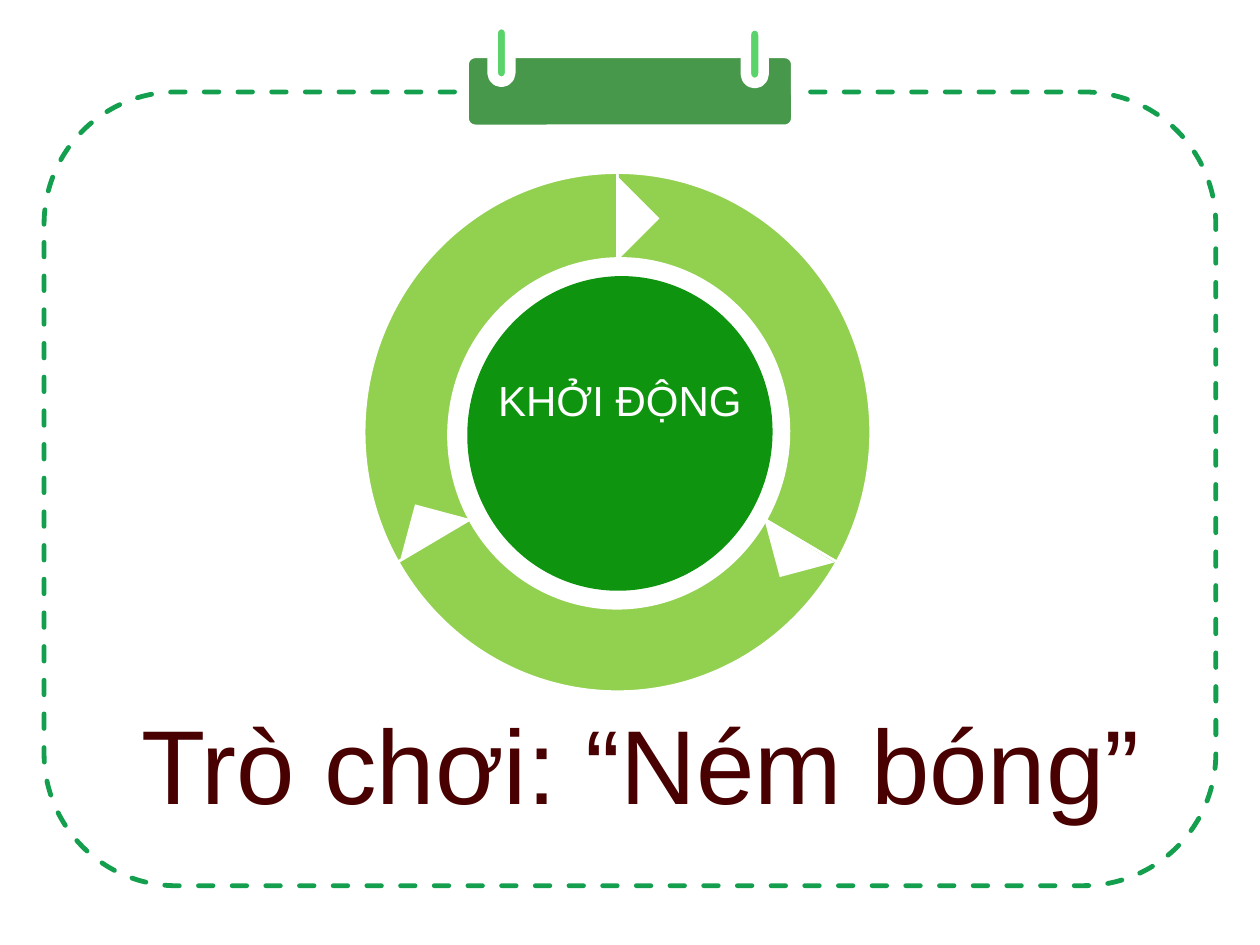
import math
from lxml import etree
from pptx import Presentation
from pptx import util as u
from pptx.dml.color import RGBColor
from pptx.enum import dml, shapes, text
from pptx.oxml.ns import qn

PX = 9144  # 100 px to the inch
COLORS = {
    "frame": "139F4E", "tab": "47984B", "pin": "59D36A", "ring": "92D050",
    "hub": "0E940E", "white": "FFFFFF", "title": "480000",
}
KIND = shapes.MSO_SHAPE

prs = Presentation()
prs.slide_width, prs.slide_height = 1000 * PX, 750 * PX
slide = prs.slides.add_slide(prs.slide_layouts[6])


def paint(shape, fill=None, line=None, width=0):
    shape.shadow.inherit = False
    if fill:
        shape.fill.solid()
        shape.fill.fore_color.rgb = RGBColor.from_string(COLORS[fill])
    else:
        shape.fill.background()
    if line:
        shape.line.color.rgb = RGBColor.from_string(COLORS[line])
        shape.line.width = u.Pt(width)
    else:
        shape.line.fill.background()
    return shape


def add_label(box, words, size, color, wrap):
    frame = slide.shapes.add_textbox(*[n * PX for n in box]).text_frame
    frame.word_wrap = wrap
    line = frame.paragraphs[0]
    line.alignment = text.PP_ALIGN.CENTER
    run = line.add_run()
    run.text = words
    run.font.name, run.font.size = "Arial", u.Pt(size)
    run.font.color.rgb = RGBColor.from_string(COLORS[color])


# Dashed frame with round dash ends
border = slide.shapes.add_shape(KIND.ROUNDED_RECTANGLE, 35 * PX, 73 * PX, 930 * PX, 630 * PX)
paint(border, line="frame", width=2.75).line.dash_style = dml.MSO_LINE.DASH
border._element.spPr.find(qn("a:ln")).set("cap", "rnd")

# Hanging tab and its two pins
for left, top, width, height, corner, fill in [
    (368, 42, 264, 61, 0.15, "tab"),
    (391, 19, 14, 46, 0.5, "pin"),
    (592, 20, 14, 46, 0.5, "pin"),
]:
    hanger = slide.shapes.add_shape(
        KIND.ROUNDED_RECTANGLE, left * PX, top * PX, width * PX, height * PX)
    hanger.adjustments[0] = corner
    paint(hanger, fill, "white", 6)

# Ring: three sectors of 120 degrees, each of two curves, with a white notch
CENTER_X, CENTER_Y, RADIUS_X, RADIUS_Y = 490, 343, 201, 206
for stops, notch_box, turn in [
    ((-90, 0, 30), (467, 150, 47, 46), 225),
    ((150, 180, 270), (322, 406, 47, 46), 105),
    ((30, 90, 150), (612, 406, 45, 47), 345),
]:
    rim = []
    for start, end in zip(stops, stops[1:]):
        a, b = math.radians(start), math.radians(end)
        pull = 4 / 3 * math.tan((b - a) / 4)
        rim += [
            (math.cos(a), math.sin(a)),
            (math.cos(a) - pull * math.sin(a), math.sin(a) + pull * math.cos(a)),
            (math.cos(b) + pull * math.sin(b), math.sin(b) - pull * math.cos(b)),
        ]
    rim += [(math.cos(b), math.sin(b)), (0, 0)]
    points = [(round((CENTER_X + RADIUS_X * x) * PX), round((CENTER_Y + RADIUS_Y * y) * PX))
              for x, y in rim]
    outline = slide.shapes.build_freeform(*points[0])
    outline.add_line_segments(points[1:], close=True)
    sector = paint(outline.convert_to_shape(), "ring", "white", 1.5)

    # Each three rim points become one Bézier curve
    steps = list(sector._element.iter(qn("a:lnTo")))
    for first in (0, 3):
        curve = etree.Element(qn("a:cubicBezTo"))
        steps[first].addprevious(curve)
        for step in steps[first:first + 3]:
            curve.append(step[0])
            step.getparent().remove(step)

    notch = slide.shapes.add_shape(KIND.RIGHT_TRIANGLE, *[n * PX for n in notch_box])
    notch.rotation = turn
    paint(notch, "white")

# Hub
for box, fill in [((355, 204, 272, 280), "white"), ((371, 219, 242, 250), "hub")]:
    disc = slide.shapes.add_shape(KIND.OVAL, *[n * PX for n in box])
    disc.rotation = 10.8
    paint(disc, fill)

# Wording
add_label((376, 292, 232, 97), "KHỞI ĐỘNG", 24, "white", False)
add_label((75, 550, 867, 111), "Trò chơi: “Ném bóng”", 60, "title", True)

prs.save("out.pptx")
